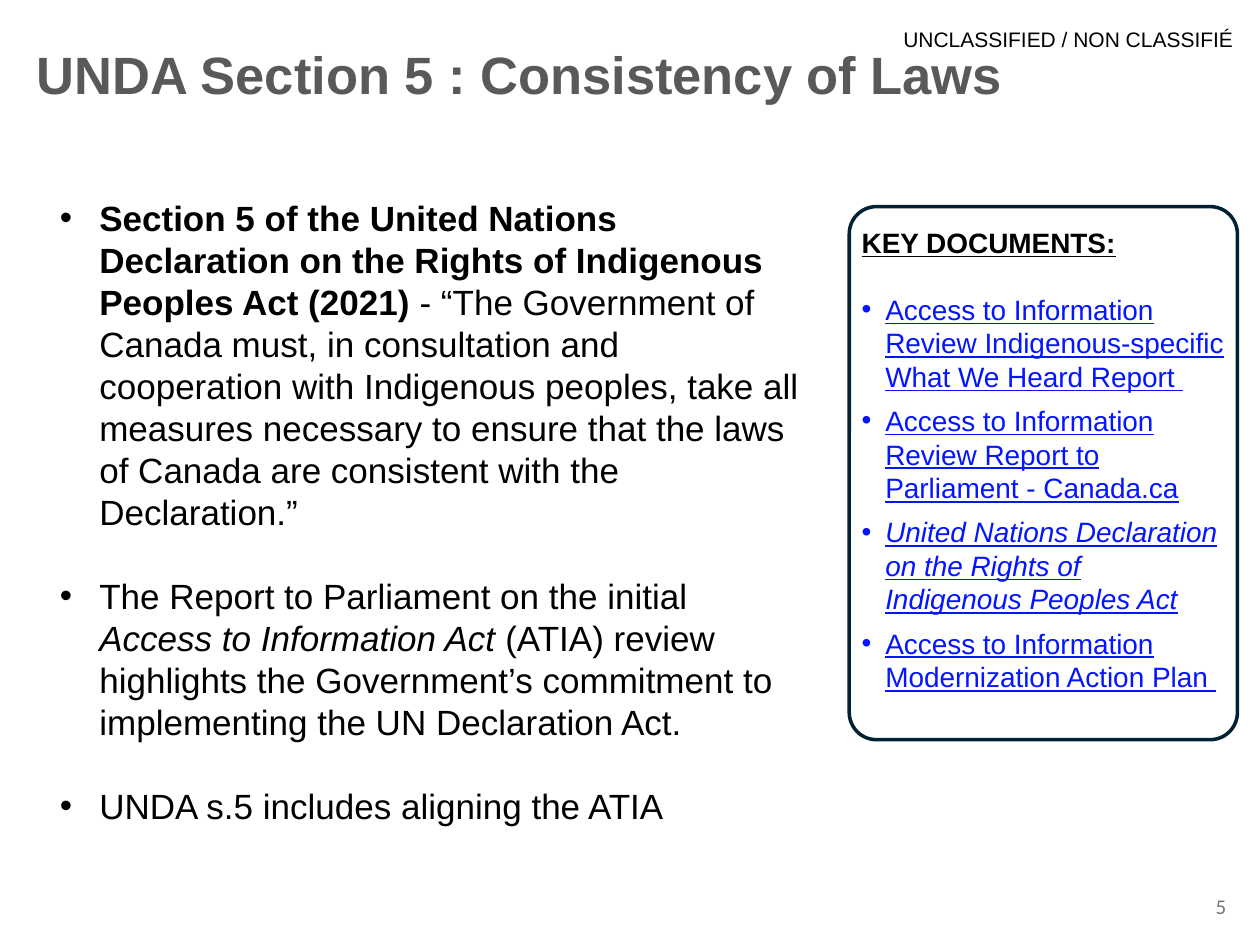
from lxml import etree
from pptx import Presentation
from pptx import util as u
from pptx.dml.color import RGBColor
from pptx.enum import shapes, text
from pptx.oxml.ns import qn

Pt = u.Pt
BLACK, GREY, LINK, NAVY = "000000", "595959", "0415FF", "002232"


def color(value):
    return RGBColor.from_string(value)


def add_text_box(s, x, y, w, h, inset=None):
    tf = s.shapes.add_textbox(Pt(x), Pt(y), Pt(w), Pt(h)).text_frame
    tf.word_wrap = True
    if inset is not None:
        tf.margin_left = tf.margin_right = Pt(inset)
        tf.margin_top = tf.margin_bottom = Pt(inset)
    return tf


def add_run(p, words, size, fill=BLACK, name="Arial", bold=False, italic=False, underline=False):
    r = p.add_run()
    r.text = words
    f = r.font
    f.name, f.size, f.bold, f.italic, f.underline = name, Pt(size), bold, italic, underline
    f.color.rgb = color(fill)


def set_bullet(p, left, hanging):
    """Give the paragraph a round bullet with a hanging indent."""
    pPr = p._p.get_or_add_pPr()
    pPr.set("marL", str(Pt(left)))
    pPr.set("indent", str(-Pt(hanging)))
    etree.SubElement(pPr, qn("a:buFont")).set("typeface", "Arial")
    etree.SubElement(pPr, qn("a:buChar")).set("char", "•")


def add_classification(s, x, y, w, h):
    tf = add_text_box(s, x, y, w, h, inset=0)
    tf.word_wrap = False
    add_run(tf.paragraphs[0], "UNCLASSIFIED / NON CLASSIFIÉ", 12)


def add_title(s, x, y, w, h):
    tf = add_text_box(s, x, y, w, h, inset=0)
    add_run(tf.paragraphs[0], "UNDA Section 5 : Consistency of Laws", 30, GREY, bold=True)


def add_body(s, x, y, w, h):
    bullets = [
        [("Section 5 of the United Nations Declaration on the Rights of Indigenous "
          "Peoples Act (2021) ", {"bold": True}),
         ("- “The Government of Canada must, in consultation and cooperation with "
          "Indigenous peoples, take all measures necessary to ensure that the laws of "
          "Canada are consistent with the Declaration.”", {})],
        [("The Report to Parliament on the initial ", {}),
         ("Access to Information Act", {"italic": True}),
         (" (ATIA) review highlights the Government’s commitment to implementing "
          "the UN Declaration Act.", {})],
        [("UNDA s.5 includes aligning the ATIA", {})],
    ]
    tf = add_text_box(s, x, y, w, h)
    for i, runs in enumerate(bullets):
        p = tf.add_paragraph() if i else tf.paragraphs[0]
        set_bullet(p, 36, 22.5)
        if i:
            p.space_before = Pt(24)
        for words, style in runs:
            add_run(p, words, 20, **style)


def add_key_documents(s, x, y, w, h):
    documents = [
        ("Access to Information Review Indigenous-specific What We Heard Report ", False),
        ("Access to Information Review Report to Parliament - Canada.ca", False),
        ("United Nations Declaration on the Rights of Indigenous Peoples Act", True),
        ("Access to Information Modernization Action Plan ", False),
    ]
    tf = add_text_box(s, x, y + 7.2, w, h - 7.2)
    p = tf.paragraphs[0]
    add_run(p, "KEY DOCUMENTS:", 16, bold=True, underline=True)
    p.space_after = Pt(19)
    for words, italic in documents:
        p = tf.add_paragraph()
        set_bullet(p, 13.5, 13.5)
        p.space_after = Pt(6)
        add_run(p, words, 16, LINK, italic=italic, underline=True)

    frame = s.shapes.add_shape(shapes.MSO_SHAPE.ROUNDED_RECTANGLE, Pt(x), Pt(y), Pt(w), Pt(h))
    frame.adjustments[0] = 0.07
    frame.shadow.inherit = False
    frame.fill.background()
    frame.line.color.rgb = color(NAVY)
    frame.line.width = Pt(2)


def add_page_number(s, x, y, w, h):
    sp = s.shapes.add_shape(shapes.MSO_SHAPE.RECTANGLE, Pt(x), Pt(y), Pt(w), Pt(h))
    sp.shadow.inherit = False
    sp.fill.solid()
    sp.fill.fore_color.rgb = color("FFFFFF")
    sp.line.fill.background()
    tf = sp.text_frame
    tf.vertical_anchor = text.MSO_ANCHOR.MIDDLE
    p = tf.paragraphs[0]
    p.alignment = text.PP_ALIGN.RIGHT
    add_run(p, "5", 12, "767676", name="Calibri")


def main():
    prs = Presentation()
    prs.slide_width, prs.slide_height = Pt(720), Pt(540)
    s = prs.slides.add_slide(prs.slide_layouts[6])
    add_classification(s, 516.2, 15.1, 192.2, 14.4)
    add_title(s, 20.9, 23.8, 601.2, 38.2)
    add_body(s, 13.7, 108.7, 450.7, 370.8)
    add_key_documents(s, 485.3, 118.1, 221.8, 304.6)
    add_page_number(s, 669.6, 509, 38.2, 17.3)
    prs.save("out.pptx")


if __name__ == "__main__":
    main()
